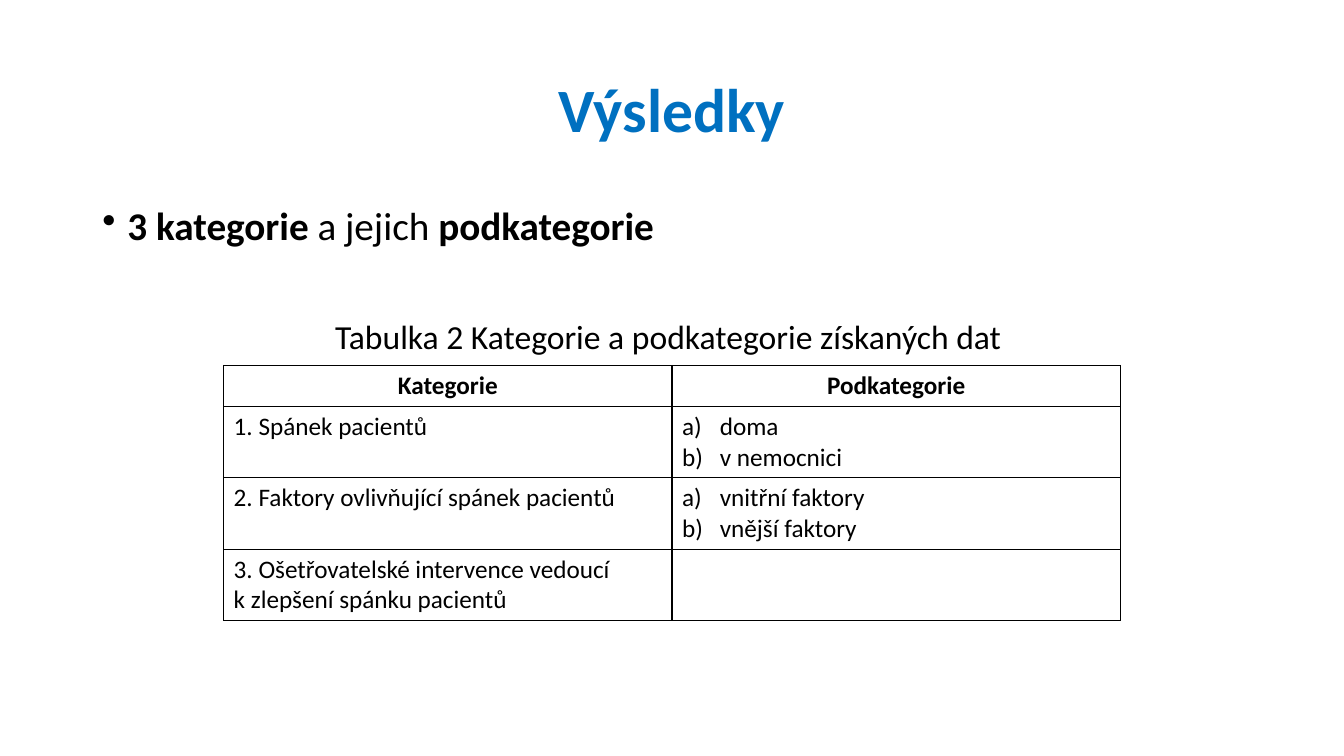
from lxml.etree import SubElement
from pptx import Presentation
from pptx.dml.color import RGBColor
from pptx.enum.text import MSO_ANCHOR, PP_ALIGN
from pptx.oxml import parse_xml
from pptx.oxml.ns import nsdecls, qn
from pptx.util import Pt

PX = 9525  # EMU per px, 96 px to the inch
BLUE = RGBColor(0x00, 0x70, 0xC0)
BLACK = RGBColor(0x00, 0x00, 0x00)
FONT = "Calibri"

HEADINGS = ["Kategorie", "Podkategorie"]
CATEGORIES = [
    ("1. Spánek pacientů", ["doma", "v nemocnici"]),
    ("2. Faktory ovlivňující spánek pacientů", ["vnitřní faktory", "vnější faktory"]),
    ("3. Ošetřovatelské intervence vedoucí \vk zlepšení spánku pacientů", []),
]


def set_font(para, size, color=BLACK, bold=None):
    font = para.font
    font.name, font.size, font.bold = FONT, Pt(size), bold
    font.color.rgb = color


def set_bullet(para, indent, tag, **attributes):
    properties = para._p.get_or_add_pPr()
    properties.set("marL", str(indent * PX))
    properties.set("indent", str(-indent * PX))
    SubElement(properties, qn(tag), attributes)


def add_text_box(page, box, anchor):
    left, top, width, height = (length * PX for length in box)
    frame = page.shapes.add_textbox(left, top, width, height).text_frame
    frame.word_wrap = True
    frame.vertical_anchor = anchor
    return frame


def add_title(page, box):
    para = add_text_box(page, box, MSO_ANCHOR.MIDDLE).paragraphs[0]
    para.text = "Výsledky"
    para.alignment = PP_ALIGN.CENTER
    para.line_spacing = 0.9
    set_font(para, 44, BLUE, True)


def add_body(page, box):
    frame = add_text_box(page, box, MSO_ANCHOR.TOP)

    # Bulleted statement
    para = frame.paragraphs[0]
    para.line_spacing = 0.9
    set_bullet(para, 24, "a:buChar", char="•")
    set_font(para, 28)
    for text, bold in [("3 kategorie ", True), ("a jejich ", False), ("podkategorie", True)]:
        span = para.add_run()
        span.text = text
        span.font.bold = bold

    # Table caption
    caption = frame.add_paragraph()
    caption.text = "Tabulka 2 Kategorie a podkategorie získaných dat "
    caption.alignment = PP_ALIGN.CENTER
    caption.line_spacing = 0.9
    caption.space_before = Pt(51)
    set_font(caption, 24)


def style_cell(cell):
    cell.fill.background()
    properties = cell._tc.get_or_add_tcPr()
    for index, side in enumerate(["lnL", "lnR", "lnT", "lnB"]):
        properties.insert(index, parse_xml(
            f'<a:{side} {nsdecls("a")} w="{Pt(1)}"><a:solidFill>'
            f'<a:srgbClr val="{BLACK}"/></a:solidFill></a:{side}>'))


def fill_cell(cell, lines, heading=False, lettered=False):
    style_cell(cell)
    frame = cell.text_frame
    for index, line in enumerate(lines or [""]):
        para = frame.add_paragraph() if index else frame.paragraphs[0]
        para.text = line
        if lettered and line:
            set_bullet(para, 36, "a:buAutoNum", type="alphaLcParenR")
        if heading:
            para.alignment = PP_ALIGN.CENTER
        set_font(para, 18, bold=heading)
    if heading:
        cell.vertical_anchor = MSO_ANCHOR.MIDDLE


def add_category_table(page, box, heading_height=39):
    left, top, width, height = box
    table = page.shapes.add_table(
        len(CATEGORIES) + 1, len(HEADINGS),
        left * PX, top * PX, width * PX, height * PX).table
    table.first_row = table.horz_banding = False
    for column in table.columns:
        column.width = width * PX // len(HEADINGS)
    row_height = (height - heading_height) // len(CATEGORIES)
    for index, row in enumerate(table.rows):
        row.height = (row_height if index else heading_height) * PX

    for column, heading in enumerate(HEADINGS):
        fill_cell(table.cell(0, column), [heading], heading=True)
    for row, (category, subcategories) in enumerate(CATEGORIES, 1):
        fill_cell(table.cell(row, 0), [category])
        fill_cell(table.cell(row, 1), subcategories, lettered=True)


def main():
    deck = Presentation()
    deck.slide_width, deck.slide_height = 1280 * PX, 720 * PX
    page = deck.slides.add_slide(deck.slide_layouts[6])
    add_title(page, (88, 38, 1104, 139))
    add_body(page, (88, 192, 1104, 457))
    add_category_table(page, (213, 348, 854, 243))
    deck.save("out.pptx")


if __name__ == "__main__":
    main()
